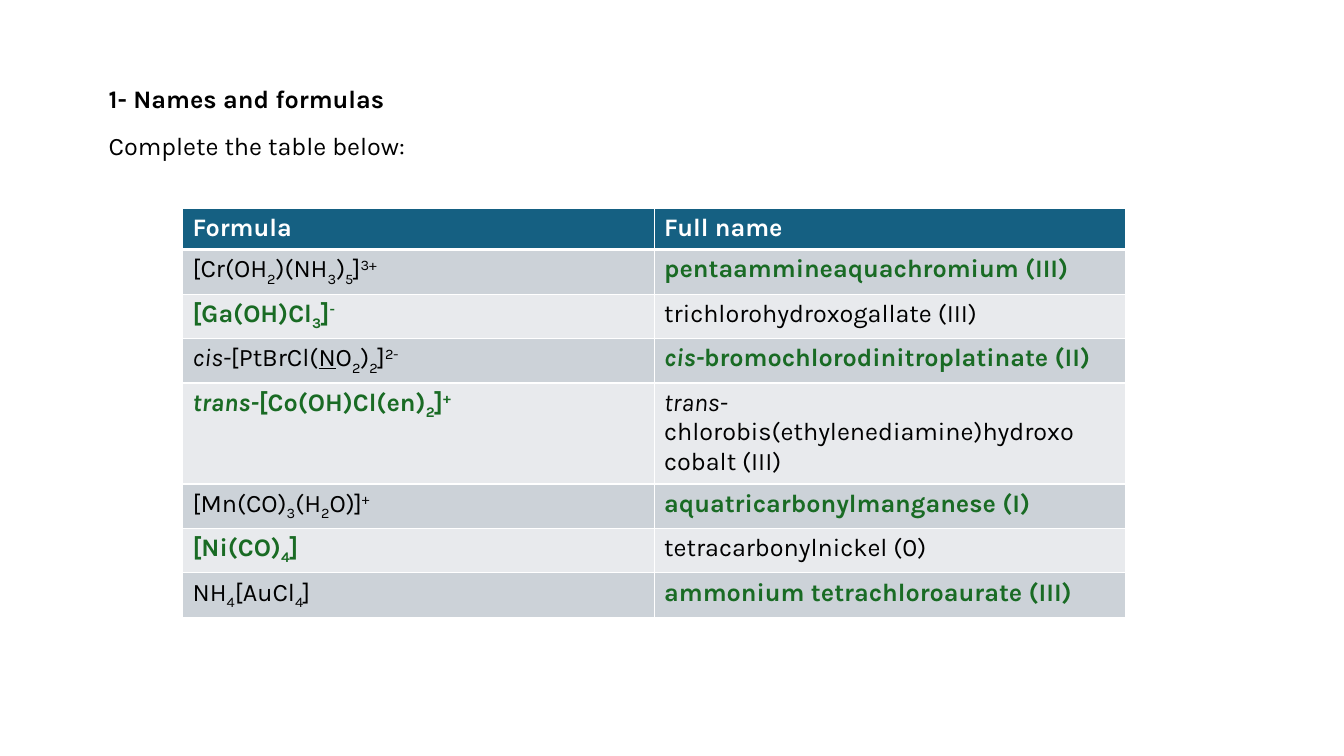
from lxml import etree
from pptx import Presentation
from pptx.dml.color import RGBColor
from pptx.enum.text import MSO_AUTO_SIZE
from pptx.oxml.ns import qn
from pptx.util import Cm, Pt

FIT_SHAPE = MSO_AUTO_SIZE.SHAPE_TO_FIT_TEXT
FONT = "Karla"
BLACK, WHITE, ANSWER = "000000", "FFFFFF", "196B24"
HEADER_FILL, BANDS = "156082", ("CCD2D8", "E8EAED")

# Markup: ~subscript~ ^superscript^ *italic* |underline|
MARKS = {"~": "sub", "^": "sup", "*": "italic", "|": "underline"}
BASELINES = {"sub": "-25000", "sup": "30000"}

HEADER = ("Formula", "Full name")
COMPLEXES = [
    ("[Cr(OH~2~)(NH~3~)~5~]^3+^", "pentaammineaquachromium (III)"),
    ("[Ga(OH)Cl~3~]^-^", "trichlorohydroxogallate (III)"),
    ("*cis-*[PtBrCl(|N|O~2~)~2~]^2-^", "*cis-*bromochlorodinitroplatinate (II)"),
    ("*trans-*[Co(OH)Cl(en)~2~]^+^",
     "*trans-*chlorobis(ethylenediamine)hydroxo cobalt (III)"),
    ("[Mn(CO)~3~(H~2~O)]^+^", "aquatricarbonylmanganese (I)"),
    ("[Ni(CO)~4~]", "tetracarbonylnickel (0)"),
    ("NH~4~[AuCl~4~]", "ammonium tetrachloroaurate (III)"),
]


def rgb(hex_color):
    return RGBColor.from_string(hex_color)


def split_marks(text):
    """Return (text, style) pieces; style is None for plain text."""
    pieces, piece, style = [], "", None
    for char in text:
        if char not in MARKS:
            piece += char
            continue
        if piece:
            pieces.append((piece, style))
        piece, style = "", None if style else MARKS[char]
    if piece:
        pieces.append((piece, style))
    return pieces


def write(tf, text, size=18, color=BLACK, bold=False):
    tf.word_wrap = True
    p = tf.paragraphs[0]
    for piece, style in split_marks(text):
        r = p.add_run()
        r.text = piece
        r.font.name = FONT
        r.font.size = Pt(size)
        r.font.bold = bold
        r.font.color.rgb = rgb(color)
        if style == "italic":
            r.font.italic = True
        elif style == "underline":
            r.font.underline = True
        elif style:
            r.font._element.set("baseline", BASELINES[style])


def set_borders(cell, color=WHITE, **widths):
    """Border lines come before the fill in the cell properties."""
    tc_pr = cell._tc.get_or_add_tcPr()
    for i, side in enumerate("LRTB"):
        ln = etree.Element(qn(f"a:ln{side}"), w=str(Pt(widths.get(side, 1))))
        fill = etree.SubElement(ln, qn("a:solidFill"))
        etree.SubElement(fill, qn("a:srgbClr"), val=color)
        tc_pr.insert(i, ln)


def add_heading(s, left, top, width, line_height=1.02, pitch=1.17):
    lines = [("1- Names and formulas", True), ("Complete the table below:", False)]
    for i, (text, bold) in enumerate(lines):
        box = s.shapes.add_textbox(Cm(left), Cm(top + i * pitch), Cm(width), Cm(line_height))
        write(box.text_frame, text, bold=bold)
        box.text_frame.auto_size = FIT_SHAPE


def add_complex_table(s, left, top, width, row_height=1.03):
    rows = [HEADER] + COMPLEXES
    table = s.shapes.add_table(len(rows), len(HEADER), Cm(left), Cm(top), Cm(width),
                               Cm(row_height * len(rows))).table
    for i, row in enumerate(rows):
        for j, text in enumerate(row):
            cell = table.cell(i, j)
            cell.fill.solid()
            if i == 0:
                cell.fill.fore_color.rgb = rgb(HEADER_FILL)
                write(cell.text_frame, text, color=WHITE, bold=True)
                set_borders(cell, B=3)
                continue
            # Answers alternate between the two columns
            answer = (i + j) % 2 == 0
            cell.fill.fore_color.rgb = rgb(BANDS[(i - 1) % 2])
            write(cell.text_frame, text, color=ANSWER if answer else BLACK, bold=answer)
            set_borders(cell, T=3 if i == 1 else 1)


def main():
    prs = Presentation()
    prs.slide_width, prs.slide_height = Cm(33.87), Cm(19.05)
    s = prs.slides.add_slide(prs.slide_layouts[6])
    add_heading(s, 2.49, 1.98, 28.47)
    add_complex_table(s, 4.6, 5.26, 23.77)
    prs.save("out.pptx")


if __name__ == "__main__":
    main()
